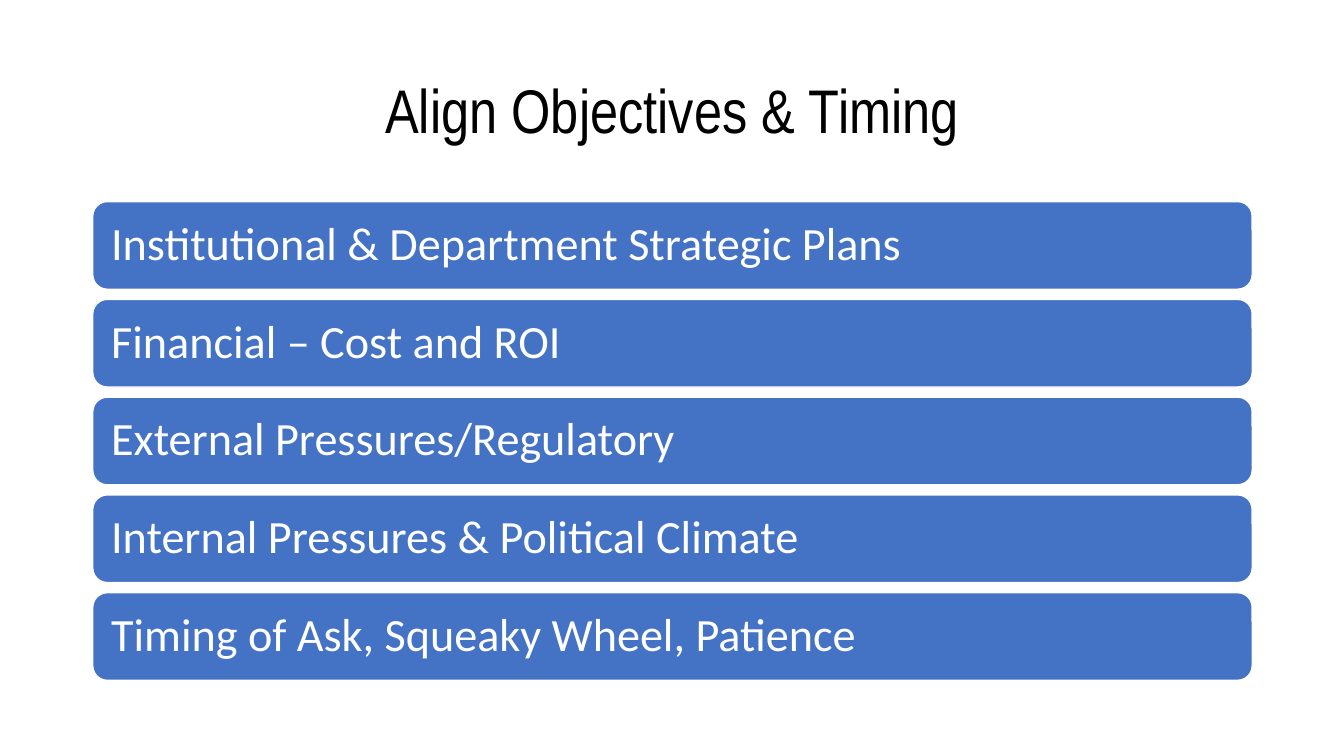
from pptx import Presentation
from pptx.dml.color import RGBColor
from pptx.enum.shapes import MSO_SHAPE
from pptx.enum.text import MSO_ANCHOR, MSO_AUTO_SIZE, PP_ALIGN
from pptx.util import Pt

PX = 9144  # 100 px to the inch
BLACK = RGBColor(0x00, 0x00, 0x00)
WHITE = RGBColor(0xFF, 0xFF, 0xFF)
BLUE = RGBColor(0x44, 0x72, 0xC4)

LEFT, WIDTH = 92, 1150
TOP, HEIGHT, STEP = 200, 87, 97
TOPICS = [
    "Institutional & Department Strategic Plans",
    "Financial – Cost and ROI",
    "External Pressures/Regulatory",
    "Internal Pressures & Political Climate",
    "Timing of Ask, Squeaky Wheel, Patience",
]


def write(shape, text, font, size, color, align, inset):
    frame = shape.text_frame
    frame.text = text
    frame.word_wrap = True
    frame.auto_size = MSO_AUTO_SIZE.NONE
    frame.vertical_anchor = MSO_ANCHOR.MIDDLE
    frame.margin_left = frame.margin_right = inset * PX
    frame.margin_top = frame.margin_bottom = inset * PX
    line = frame.paragraphs[0]
    line.alignment = align
    line.line_spacing = 0.9
    style = line.runs[0].font
    style.name = font
    style.size = Pt(size)
    style.color.rgb = color


deck = Presentation()
deck.slide_width = 1333 * PX
deck.slide_height = 750 * PX
slide = deck.slides.add_slide(deck.slide_layouts[5])

title = slide.shapes.title
title.left, title.top = LEFT * PX, 40 * PX
title.width, title.height = WIDTH * PX, 145 * PX
write(title, "Align Objectives & Timing", font="Arial Narrow", size=44,
      color=BLACK, align=PP_ALIGN.CENTER, inset=5)

for row, topic in enumerate(TOPICS):
    bar = slide.shapes.add_shape(
        MSO_SHAPE.ROUNDED_RECTANGLE,
        LEFT * PX, (TOP + row * STEP) * PX, WIDTH * PX, HEIGHT * PX)
    bar.shadow.inherit = False
    bar.fill.solid()
    bar.fill.fore_color.rgb = BLUE
    bar.line.color.rgb = WHITE
    bar.line.width = Pt(1)
    write(bar, topic, font="Calibri", size=33,
          color=WHITE, align=PP_ALIGN.LEFT, inset=14)

deck.save("out.pptx")
